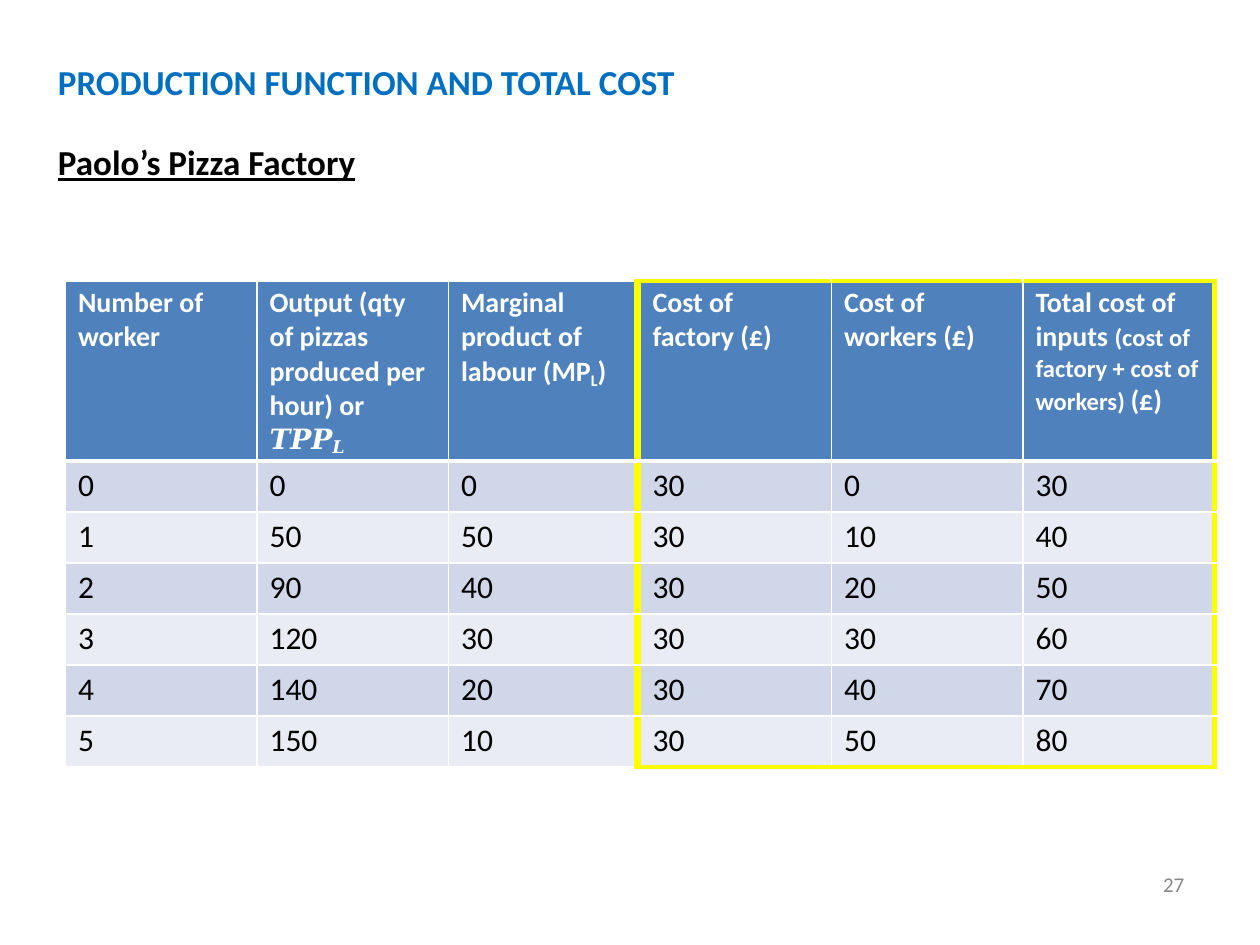
from lxml.etree import SubElement
from pptx import Presentation
from pptx.dml.color import RGBColor
from pptx.oxml import parse_xml
from pptx.oxml.ns import nsdecls, qn
from pptx.util import Inches, Pt

SLIDE = (10, 7.5)
FONT, MATH_FONT = "Calibri", "Times New Roman"
WHITE, BLACK, YELLOW = "FFFFFF", "000000", "FFFF00"
TITLE_BLUE, HEADER_BLUE, GREY = "006FC0", "4F81BC", "888888"
BANDS = ("D0D7E8", "E9ECF4")

TITLE = "PRODUCTION FUNCTION AND TOTAL COST"
SUBTITLE = "Paolo’s Pizza Factory"
PAGE_NUMBER = "27"

# One header per column: paragraphs, each a list of (text, format) spans.
SMALL = {"size": 14}
HEADERS = [
    [[("Number of", {})], [("worker", {})]],
    [[("Output (qty of pizzas produced per hour) or", {})],
     [("𝑻𝑷𝑷", {"font": MATH_FONT, "bold": False}),
      ("𝑳", {"font": MATH_FONT, "bold": False, "size": 17.2, "baseline": -14})]],
    [[("Marginal product of labour (MP", {}),
      ("L", {"size": 15.8, "baseline": -21}), (")", {})]],
    [[("Cost of", {})], [("factory (£)", {})]],
    [[("Cost of", {})], [("workers (£)", {})]],
    [[("Total cost of inputs ", {}), ("(cost of factory + cost of workers) ", SMALL),
      ("(£)", {})]],
]
FACTORY_COST, WAGE = 30, 10
OUTPUTS = [0, 50, 90, 120, 140, 150]
MARGINALS = [0, 50, 40, 30, 20, 10]
ROWS = [
    (workers, output, marginal, FACTORY_COST, WAGE * workers, FACTORY_COST + WAGE * workers)
    for workers, (output, marginal) in enumerate(zip(OUTPUTS, MARGINALS))
]

TABLE_LEFT, TABLE_TOP = 0.52, 2.23
COLUMN_WIDTHS = [1.52, 1.52, 1.5, 1.54, 1.52, 1.52]
HEADER_HEIGHT, TABLE_HEIGHT = 1.43, 3.86
ROW_HEIGHT = (TABLE_HEIGHT - HEADER_HEIGHT) / len(ROWS)
FIRST_COST_COLUMN = 3
LAST_COLUMN, LAST_ROW = len(HEADERS) - 1, len(ROWS)


def color(value):
    return RGBColor.from_string(value)


def add_span(para, text, size=16, fill=BLACK, font=FONT, bold=False,
             underline=False, baseline=0):
    span = para.add_run()
    span.text = text
    span.font.size = Pt(size)
    span.font.name = font
    span.font.bold = bold
    span.font.color.rgb = color(fill)
    if underline:
        span.font.underline = True
    if baseline:
        span.font._element.set("baseline", str(baseline * 1000))


def set_margins(target, left=0, top=0, right=0):
    target.margin_left, target.margin_top = Inches(left), Inches(top)
    target.margin_right, target.margin_bottom = Inches(right), 0


def add_box(page, place, **margins):
    """Add a wrapping text box at place: left, top, width, height in inches."""
    frame = page.shapes.add_textbox(*map(Inches, place)).text_frame
    frame.word_wrap = True
    set_margins(frame, **margins)
    return frame


def cell_borders(row, column):
    """Yellow frames the cost columns; white separates every other cell."""
    costs = column >= FIRST_COST_COLUMN
    borders = {side: (WHITE, 1) for side in ("lnL", "lnR", "lnT", "lnB")}
    if row == 0:
        borders["lnB"] = (WHITE, 3)
        if costs:
            borders["lnT"] = (YELLOW, 3)
    elif row == 1:
        borders["lnT"] = (WHITE, 3)
    if row == LAST_ROW and costs:
        borders["lnB"] = (YELLOW, 3)
    if column == FIRST_COST_COLUMN:
        borders["lnL"] = (YELLOW, 4.5)
    if column == FIRST_COST_COLUMN - 1:
        borders["lnR"] = (YELLOW, 4.5)
    if column == LAST_COLUMN:
        borders["lnR"] = (YELLOW, 3)
    return borders


def style_cell(cell, row, column):
    cell.fill.solid()
    cell.fill.fore_color.rgb = color(BANDS[(row - 1) % 2] if row else HEADER_BLUE)
    # The output header needs a right margin to break before "of".
    set_margins(cell, left=0.12 if column == FIRST_COST_COLUMN else 0.1, top=0.04,
                right=0.18 if (row, column) == (0, 1) else 0)
    properties = cell._tc.get_or_add_tcPr()
    for position, (side, (value, width)) in enumerate(cell_borders(row, column).items()):
        line = parse_xml(f'<a:{side} {nsdecls("a")} w="{Pt(width)}"/>')
        solid = SubElement(line, qn("a:solidFill"))
        SubElement(solid, qn("a:srgbClr"), val=value)
        properties.insert(position, line)


def add_cost_table(page):
    place = (TABLE_LEFT, TABLE_TOP, sum(COLUMN_WIDTHS), TABLE_HEIGHT)
    table = page.shapes.add_table(len(ROWS) + 1, len(HEADERS), *map(Inches, place)).table
    table.first_row = table.horz_banding = False
    for column, width in zip(table.columns, COLUMN_WIDTHS):
        column.width = Inches(width)
    for number, row in enumerate(table.rows):
        row.height = Inches(ROW_HEIGHT if number else HEADER_HEIGHT)
        for column, cell in enumerate(row.cells):
            style_cell(cell, number, column)
            frame = cell.text_frame
            if number:
                add_span(frame.paragraphs[0], str(ROWS[number - 1][column]), size=18)
                continue
            for index, spans in enumerate(HEADERS[column]):
                para = frame.add_paragraph() if index else frame.paragraphs[0]
                for text, look in spans:
                    add_span(para, text, **{"fill": WHITE, "bold": True, **look})


def main():
    deck = Presentation()
    deck.slide_width, deck.slide_height = map(Inches, SLIDE)
    page = deck.slides.add_slide(deck.slide_layouts[6])

    heading = add_box(page, (0.45, 0.46, 4.91, 1), left=0.01, top=0.02)
    add_span(heading.paragraphs[0], TITLE, size=20, fill=TITLE_BLUE, bold=True)
    subtitle = heading.add_paragraph()
    subtitle.space_before = Pt(22)
    add_span(subtitle, SUBTITLE, size=20, bold=True, underline=True)

    add_cost_table(page)

    footer = add_box(page, (9.19, 6.65, 0.32, 0.61), left=0.04, top=0.42)
    footer.paragraphs[0].line_spacing = Pt(12.4)
    add_span(footer.paragraphs[0], PAGE_NUMBER, size=12, fill=GREY)

    deck.save("out.pptx")


if __name__ == "__main__":
    main()
